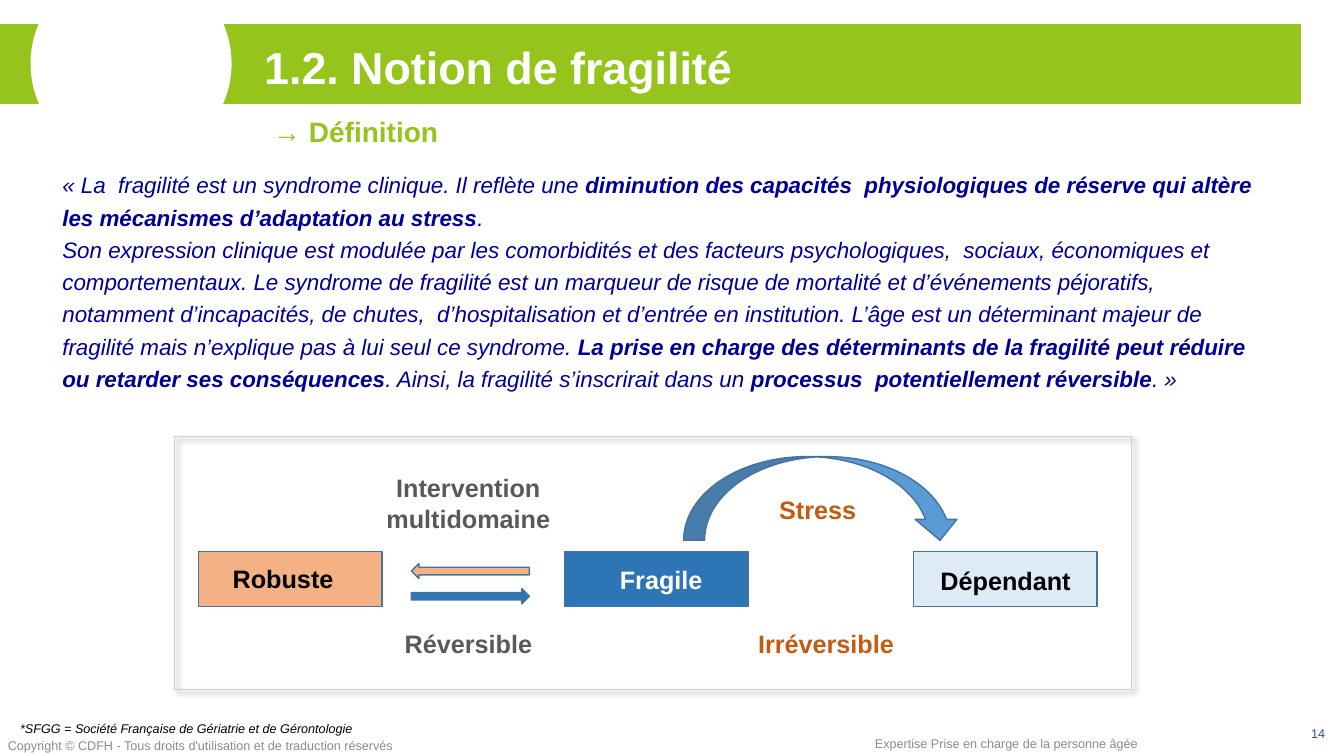
from dataclasses import dataclass

from lxml.etree import SubElement
from pptx import Presentation
from pptx.dml.color import RGBColor
from pptx.enum.shapes import MSO_SHAPE as SHAPE
from pptx.enum.text import MSO_ANCHOR as ANCHOR, PP_ALIGN as ALIGN
from pptx.oxml.ns import qn
from pptx.util import Inches, Pt

FONT = "Arial"
GREEN, WHITE, BLACK, NAVY = "95C41D", "FFFFFF", "000000", "000099"
GREY, RUST, FOOTER_GREY, PAGE_BLUE = "595959", "C55A11", "8C8C8C", "2F5597"
PEACH, BLUE, PALE_BLUE, SKY, OUTLINE = "F4B183", "2E75B6", "DEEBF7", "5B9BD5", "43739E"

Box = tuple[float, float, float, float]


@dataclass
class State:
    name: str
    left: float
    fill: str
    color: str
    label: Box


@dataclass
class Label:
    text: str
    box: Box
    color: str
    align: ALIGN = ALIGN.LEFT


@dataclass
class Arrow:
    kind: SHAPE
    box: Box
    fill: str
    rotation: int = 0
    flip: bool = False


STATES = [
    State("Dépendant", 9.06, PALE_BLUE, BLACK, (9.23, 5.56, 1.56, 0.4)),
    State("Fragile", 5.6, BLUE, WHITE, (6.05, 5.55, 1.46, 0.4)),
    State("Robuste", 1.97, PEACH, BLACK, (2.21, 5.54, 1.46, 0.4)),
]
LABELS = [
    Label("Irréversible", (7.42, 6.18, 1.56, 0.4), RUST),
    Label("Stress", (7.63, 4.86, 1.56, 0.4), RUST),
    Label("Intervention multidomaine", (3.44, 4.64, 2.41, 0.7), GREY, ALIGN.CENTER),
    Label("Réversible", (3.44, 6.18, 2.41, 0.4), GREY, ALIGN.CENTER),
]
ARROWS = [
    Arrow(SHAPE.RIGHT_ARROW, (4.08, 5.59, 1.17, 0.15), PEACH, rotation=180),
    Arrow(SHAPE.RIGHT_ARROW, (4.08, 5.84, 1.17, 0.15), BLUE),
    Arrow(SHAPE.CURVED_UP_ARROW, (6.78, 4.53, 2.75, 0.83), SKY, rotation=180, flip=True),
]
# Each paragraph is a list of (text, bold) runs.
DEFINITION = [
    [
        ("« La  fragilité est un syndrome clinique. Il reflète une ", False),
        ("diminution des capacités  physiologiques de réserve qui altère "
         "les mécanismes d’adaptation au stress", True),
        (".", False),
    ],
    [
        ("Son expression clinique est modulée par les comorbidités et des facteurs "
         "psychologiques,  sociaux, économiques et comportementaux. Le syndrome de "
         "fragilité est un marqueur de risque de mortalité et d’événements péjoratifs, "
         "notamment d’incapacités, de chutes,  d’hospitalisation et d’entrée en "
         "institution. L’âge est un déterminant majeur de fragilité mais n’explique "
         "pas à lui seul ce syndrome. ", False),
        ("La prise en charge des déterminants de la fragilité peut réduire "
         "ou retarder ses conséquences", True),
        (". Ainsi, la fragilité s’inscrirait dans un ", False),
        ("processus  potentiellement réversible", True),
        (". »", False),
    ],
]


def rgb(color: str) -> RGBColor:
    return RGBColor.from_string(color)


def place(sp, box: Box) -> None:
    sp.left, sp.top, sp.width, sp.height = map(Inches, box)


def write(sp, text, *, size: float, color: str, bold=False, italic=False,
          align=ALIGN.LEFT, anchor=ANCHOR.TOP, spacing=None, wrap=True) -> None:
    """Fill a shape with a string, or with paragraphs of (text, bold) runs."""
    tf = sp.text_frame
    tf.word_wrap = wrap
    tf.vertical_anchor = anchor
    paragraphs = [[(text, bold)]] if isinstance(text, str) else text
    for i, runs in enumerate(paragraphs):
        p = tf.add_paragraph() if i else tf.paragraphs[0]
        p.alignment = align
        p.space_before = Pt(0)
        if spacing:
            p.line_spacing = spacing
        for words, strong in runs:
            r = p.add_run()
            r.text = words
            font = r.font
            font.name, font.size = FONT, Pt(size)
            font.bold, font.italic = strong, italic
            font.color.rgb = rgb(color)


def add_text(s, text, box: Box, **style) -> None:
    write(s.shapes.add_textbox(*map(Inches, box)), text, **style)


def add_shape(s, kind: SHAPE, box: Box, fill: str | None, line: str):
    sp = s.shapes.add_shape(kind, *map(Inches, box))
    sp.shadow.inherit = False
    if fill:
        sp.fill.solid()
        sp.fill.fore_color.rgb = rgb(fill)
    else:
        sp.fill.background()
    sp.line.color.rgb = rgb(line)
    sp.line.width = Pt(1)
    return sp


def add_shadow(sp, color: str, alpha: int, blur: float, distance: float, angle: int) -> None:
    effects = sp._element.spPr.find(qn("a:effectLst"))
    shadow = SubElement(effects, qn("a:outerShdw"), blurRad=str(Pt(blur)),
                        dist=str(Pt(distance)), dir=str(angle * 60000),
                        algn="tl", rotWithShape="0")
    tint = SubElement(shadow, qn("a:srgbClr"), val=color)
    SubElement(tint, qn("a:alpha"), val=str(alpha * 1000))


def add_header(s) -> None:
    add_shape(s, SHAPE.RECTANGLE, (-0.02, 0.23, 12.93, 0.81), GREEN, WHITE)
    add_shape(s, SHAPE.OVAL, (0.31, -0.36, 1.98, 1.98), WHITE, WHITE)
    title = s.shapes.title
    s.shapes._spTree.append(title._element)  # in front of the banner
    place(title, (2.52, 0.4, 10.17, 0.62))
    write(title, "1.2. Notion de fragilité", size=32, color=WHITE, bold=True, spacing=0.9)
    add_text(s, "→ Définition", (2.61, 1.09, 7.73, 0.44), size=20, color=GREEN, bold=True)


def add_footer(s) -> None:
    add_text(s, "*SFGG = Société Française de Gériatrie et de Gérontologie",
             (0.1, 7.1, 5.02, 0.25), size=9, color=BLACK, italic=True)
    add_text(s, "Copyright © CDFH - Tous droits d'utilisation et de traduction réservés",
             (-0.02, 7.27, 6.67, 0.25), size=9, color=FOOTER_GREY)
    add_text(s, "Expertise Prise en charge de la personne âgée",
             (8.58, 7.25, 2.83, 0.25), size=9, color=FOOTER_GREY, wrap=False)
    add_text(s, "14", (12.75, 7.08, 0.49, 0.4), size=9, color=PAGE_BLUE,
             align=ALIGN.RIGHT, anchor=ANCHOR.MIDDLE)


def add_diagram(s) -> None:
    for state in STATES:
        add_shape(s, SHAPE.RECTANGLE, (state.left, 5.47, 1.82, 0.55), state.fill, OUTLINE)
        add_text(s, state.name, state.label, size=18, color=state.color, bold=True)
    for arrow in ARROWS:
        sp = add_shape(s, arrow.kind, arrow.box, arrow.fill, OUTLINE)
        sp.rotation = arrow.rotation
        if arrow.flip:
            sp._element.spPr.xfrm.set("flipH", "1")
    for label in LABELS:
        add_text(s, label.text, label.box, size=18, color=label.color,
                 bold=True, align=label.align)
    frame = add_shape(s, SHAPE.RECTANGLE, (1.73, 4.33, 9.49, 2.51), None, "D0CECE")
    add_shadow(frame, BLACK, alpha=40, blur=4, distance=3, angle=45)


def main() -> None:
    prs = Presentation()
    prs.slide_width, prs.slide_height = Inches(13.33), Inches(7.5)
    s = prs.slides.add_slide(prs.slide_layouts[5])
    add_header(s)
    add_text(s, DEFINITION, (0.52, 1.6, 12.18, 2.35), size=16, color=NAVY,
             italic=True, spacing=1.2)
    add_diagram(s)
    add_footer(s)
    prs.save("out.pptx")


if __name__ == "__main__":
    main()
